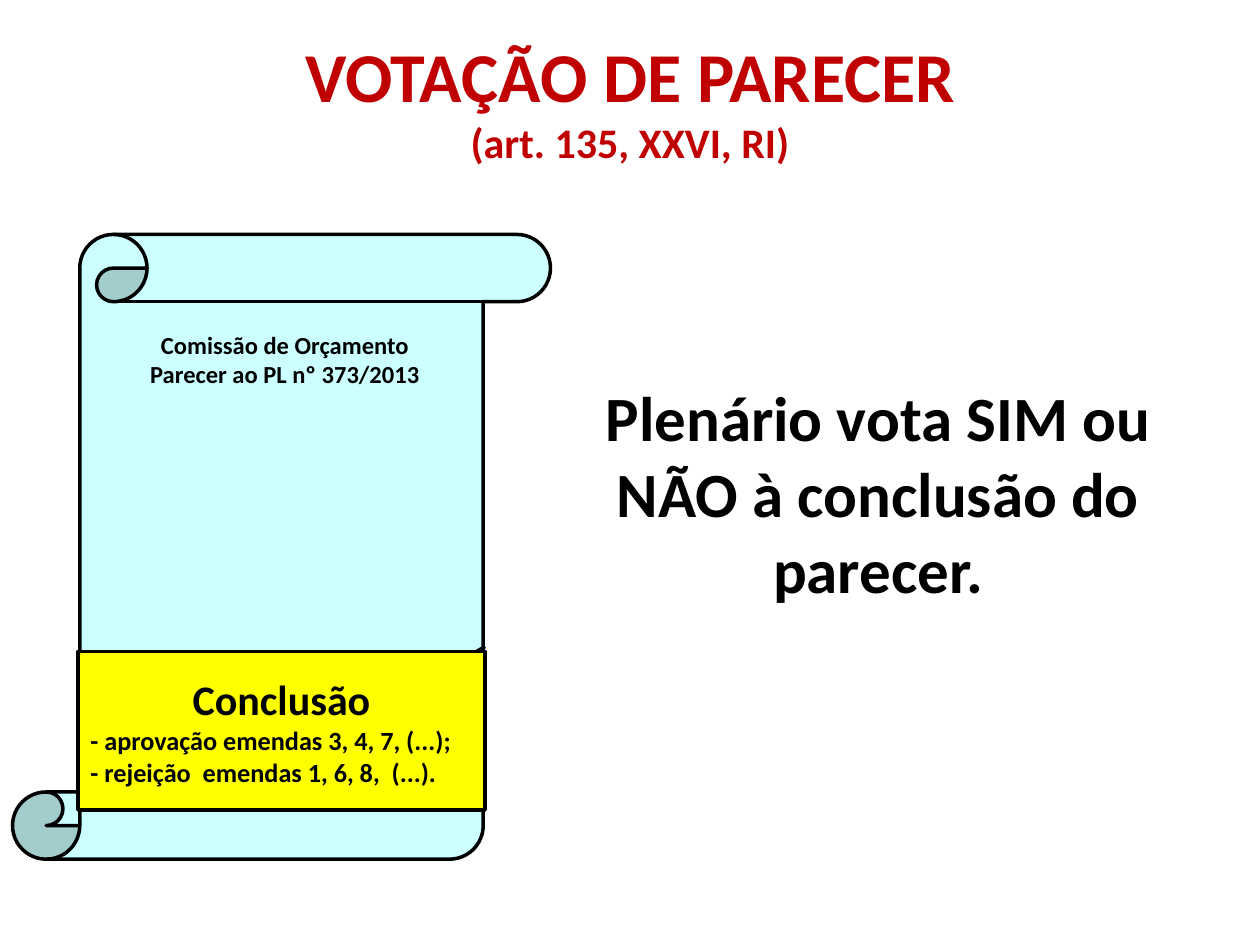
from pptx import Presentation
from pptx.dml.color import RGBColor
from pptx.enum.shapes import MSO_SHAPE as Preset
from pptx.enum.text import MSO_ANCHOR as Anchor, PP_ALIGN as Align
from pptx.util import Pt


def color(value):
    return RGBColor.from_string(value)


class SlideBuilder:
    """Hold the style and the current page and draw each kind of element."""

    font = "Calibri"
    ink = "000000"
    accent = "C00000"
    paper = "CCFFFF"
    highlight = "FFFF00"
    line_width = 2

    def __init__(self, deck):
        self.page = deck.slides.add_slide(deck.slide_layouts[6])

    def set_lines(self, box, lines, ink=ink, anchor=Anchor.TOP, wrap=True):
        frame = box.text_frame
        frame.text = "\n".join(text for text, _, _ in lines)
        frame.word_wrap = wrap
        frame.vertical_anchor = anchor
        for para, (_, sizes, align) in zip(frame.paragraphs, lines):
            para.alignment = align
            for span, size in zip(para.runs, sizes):
                span.font.name = self.font
                span.font.size = Pt(size)
                span.font.bold = True
                span.font.color.rgb = color(ink)
        return frame

    def text(self, left, top, width, height, lines, **style):
        box = self.page.shapes.add_textbox(Pt(left), Pt(top), Pt(width), Pt(height))
        return self.set_lines(box, lines, **style)

    def shape(self, preset, left, top, width, height, fill):
        shape = self.page.shapes.add_shape(preset, Pt(left), Pt(top), Pt(width), Pt(height))
        shape.shadow.inherit = False
        shape.fill.solid()
        shape.fill.fore_color.rgb = color(fill)
        shape.line.color.rgb = color(self.ink)
        shape.line.width = Pt(self.line_width)
        return shape

    def callout(self, left, top, width, height, pointer, lines):
        box = self.shape(Preset.LINE_CALLOUT_1, left, top, width, height, self.highlight)
        for index, value in enumerate(pointer):
            box.adjustments[index] = value
        self.set_lines(box, lines, anchor=Anchor.MIDDLE)


def main():
    deck = Presentation()
    deck.slide_width, deck.slide_height = Pt(720), Pt(540)
    builder = SlideBuilder(deck)

    builder.text(139, 9.4, 442, 95,
                 [("VOTAÇÃO DE PARECER\v(art. 135, XXVI, RI)", (40, 24), Align.CENTER)],
                 ink=builder.accent, anchor=Anchor.MIDDLE)

    message = builder.text(314.6, 213, 374.4, 147.6,
                           [("Plenário vota SIM ou NÃO à conclusão do parecer.", (36,), Align.CENTER)])
    message.paragraphs[0].space_before = Pt(7.2)

    builder.shape(Preset.VERTICAL_SCROLL, 7.2, 134, 307.4, 357, builder.paper)
    builder.text(77.8, 185, 170, 41,
                 [("Comissão de Orçamento", (14,), Align.CENTER),
                  ("Parecer ao PL nº 373/2013", (14,), Align.CENTER)], wrap=False)
    builder.callout(44.6, 372.2, 232.6, 90.7, (0, 0.98, -0.03, 1),
                    [("Conclusão", (24,), Align.CENTER),
                     ("- aprovação emendas 3, 4, 7, (...);", (15,), Align.JUSTIFY),
                     ("- rejeição  emendas 1, 6, 8,  (...).", (15,), Align.JUSTIFY)])
    deck.save("out.pptx")


if __name__ == "__main__":
    main()
